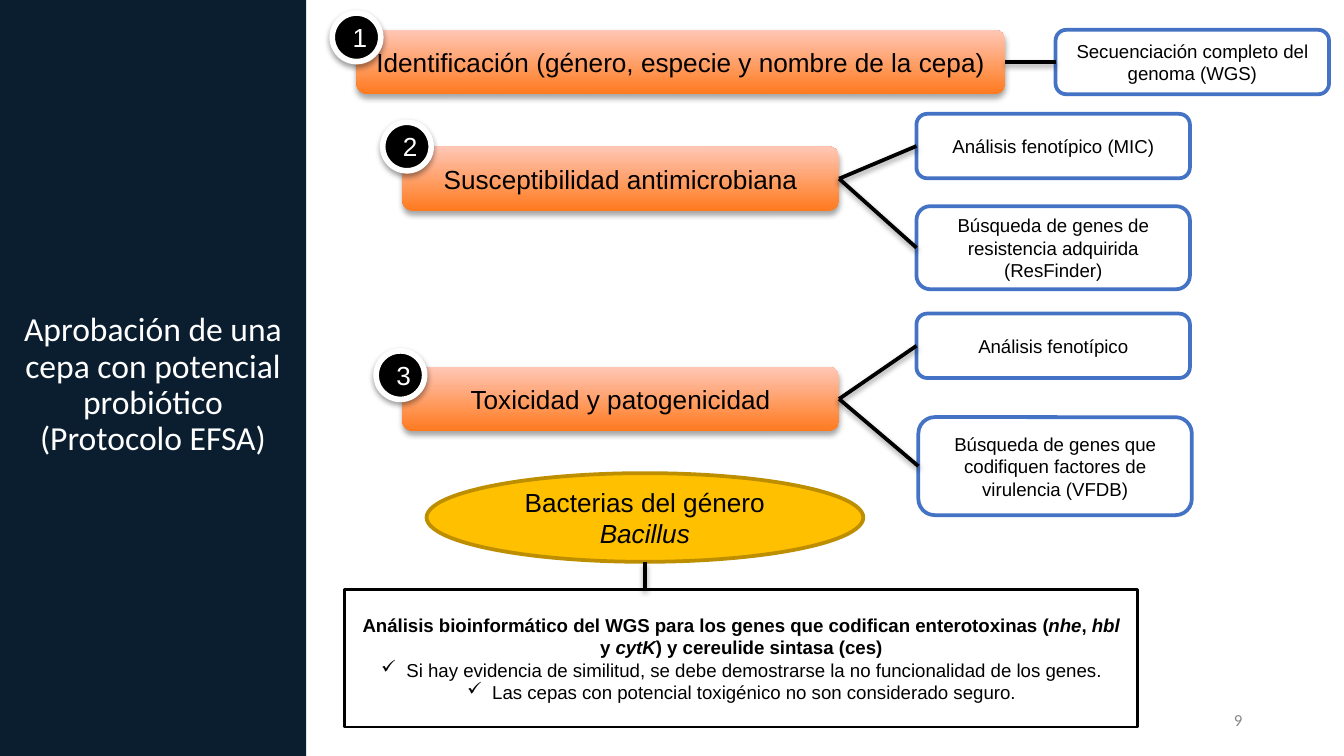
from dataclasses import dataclass
from typing import NamedTuple

from lxml.etree import SubElement
from pptx import Presentation
from pptx.dml.color import RGBColor
from pptx.enum.shapes import MSO_CONNECTOR as Link, MSO_SHAPE as Kind
from pptx.enum.text import MSO_ANCHOR as Anchor, PP_ALIGN as Align
from pptx.oxml.ns import qn
from pptx.util import Pt

BLACK, WHITE, BLUE = "000000", "FFFFFF", "4472C4"
BAR_H, TEST_W, DOT = 34.5, 146.5, 26


class Box(NamedTuple):
    x: float
    y: float
    w: float
    h: float = BAR_H

    @property
    def left(self) -> tuple[float, float]:
        return self.x, self.y + self.h / 2

    @property
    def right(self) -> tuple[float, float]:
        return self.x + self.w, self.y + self.h / 2


class Font(NamedTuple):
    size: float
    color: str = BLACK
    face: str = "Arial"


class Test(NamedTuple):
    box: Box
    text: str


@dataclass
class Step:
    text: str
    bar: Box
    dot: tuple[float, float]
    tests: list[Test]


HEAD, NOTE = Font(14), Font(10)

STEPS = [
    Step("Identificación (género, especie y nombre de la cepa)",
         Box(191, 16, 347.5), (178, 7),
         [Test(Box(565.5, 16, TEST_W), "Secuenciación completo del genoma (WGS)")]),
    Step("Susceptibilidad antimicrobiana",
         Box(215.5, 78.5, 234), (205, 65.5),
         [Test(Box(491, 61, TEST_W), "Análisis fenotípico (MIC)"),
          Test(Box(491, 110.5, TEST_W, 44.5),
               "Búsqueda de genes de resistencia adquirida (ResFinder)")]),
    Step("Toxicidad y patogenicidad",
         Box(215.5, 196.5, 234), (201.5, 188),
         [Test(Box(491, 168, TEST_W), "Análisis fenotípico"),
          Test(Box(492, 223.5, TEST_W, 52.5),
               "Búsqueda de genes que codifiquen factores de virulencia (VFDB)")]),
]


def paint(code: str) -> RGBColor:
    return RGBColor.from_string(code)


def write(frame, lines: list[str], font: Font, align=Align.CENTER) -> None:
    """Fill a frame; parts between asterisks are italic."""
    frame.word_wrap = True
    frame.vertical_anchor = Anchor.MIDDLE
    frame.text = "\n".join(lines)
    for para in frame.paragraphs:
        para.alignment = align
        parts = para.text.split("*")
        para.text = parts[0]
        for part in parts[1:]:
            para.add_run().text = part
        for n, run in enumerate(para.runs):
            run.font.size = Pt(font.size)
            run.font.name = font.face
            run.font.color.rgb = paint(font.color)
            if n % 2:
                run.font.italic = True


def pad(frame, x: float, y: float) -> None:
    frame.margin_left = frame.margin_right = Pt(x)
    frame.margin_top = frame.margin_bottom = Pt(y)


def shade(item, alpha: int = 38, dist: float = 1.6) -> None:
    """Cast a soft black shadow straight down."""
    props = item._element.spPr
    glow = props.find(qn("a:effectLst"))
    if glow is None:
        glow = SubElement(props, qn("a:effectLst"))
    drop = SubElement(glow, qn("a:outerShdw"), blurRad=str(Pt(3.1)),
                      dist=str(Pt(dist)), dir="5400000", rotWithShape="0")
    tint = SubElement(drop, qn("a:srgbClr"), val=BLACK)
    SubElement(tint, qn("a:alpha"), val=str(alpha * 1000))


def block(slide, kind: Kind, box: Box, lines: list[str], font: Font,
          fill: str = "", edge: str = "", width: float = 2):
    item = slide.shapes.add_shape(kind, *map(Pt, box))
    item.shadow.inherit = False
    if fill:
        item.fill.solid()
        item.fill.fore_color.rgb = paint(fill)
    else:
        item.fill.background()
    if edge:
        item.line.color.rgb = paint(edge)
        item.line.width = Pt(width)
    else:
        item.line.fill.background()
    write(item.text_frame, lines, font)
    return item


def join(slide, start: tuple[float, float], end: tuple[float, float]) -> None:
    line = slide.shapes.add_connector(Link.STRAIGHT, *map(Pt, start + end))
    line.line.color.rgb = paint(BLACK)
    line.line.width = Pt(2)
    shade(line)


def check(para) -> None:
    """Give a paragraph a check mark bullet."""
    props = para._p.get_or_add_pPr()
    props.set("marL", str(Pt(13.5)))
    props.set("indent", str(-Pt(13.5)))
    SubElement(SubElement(props, qn("a:buClr")), qn("a:srgbClr"), val=BLACK)
    SubElement(props, qn("a:buChar"), char="✓")


def draw(slide, num: int, step: Step) -> None:
    bar = block(slide, Kind.ROUNDED_RECTANGLE, step.bar, [step.text], HEAD)
    bar.fill.gradient()
    bar.fill.gradient_angle = 90
    for stop, code in zip(bar.fill.gradient_stops, ("FF7A1F", "FFC7B6")):
        stop.color.rgb = paint(code)
    shade(bar, 35, 1.8)
    for box, text in step.tests:
        block(slide, Kind.ROUNDED_RECTANGLE, box, [text], NOTE, WHITE, BLUE)
        join(slide, step.bar.right, box.left)
    dot = block(slide, Kind.OVAL, Box(*step.dot, DOT, DOT), [str(num)],
                Font(14, WHITE), BLACK, WHITE, 3)
    shade(dot)


def main() -> None:
    deck = Presentation()
    deck.slide_width, deck.slide_height = Pt(720), Pt(405)
    slide = deck.slides.add_slide(deck.slide_layouts[6])

    # Title panel
    panel = block(slide, Kind.RECTANGLE, Box(0, -2, 164, 417),
                  ["Aprobación de una cepa con potencial probiótico",
                   "(Protocolo EFSA)"],
                  Font(18, WHITE, "Calibri"), "0B1E30")
    pad(panel.text_frame, 2, 2)
    for para in panel.text_frame.paragraphs:
        para.line_spacing = 0.9

    # Numbered steps with their tests
    for num, step in enumerate(STEPS, 1):
        draw(slide, num, step)

    # Bacillus branch
    genus = Box(228.5, 253.5, 234, 47.5)
    genes = Box(184.5, 316, 425, 73.5)
    block(slide, Kind.OVAL, genus, ["Bacterias del género *Bacillus"], HEAD,
          "FFC000", "BD8E00")
    rules = block(slide, Kind.RECTANGLE, genes, [
        "Análisis bioinformático del WGS para los genes que codifican "
        "enterotoxinas (*nhe*, *hbl *y *cytK*) y cereulide sintasa (ces)",
        "Si hay evidencia de similitud, se debe demostrarse la no "
        "funcionalidad de los genes.",
        "Las cepas con potencial toxigénico no son considerado seguro.",
    ], NOTE, edge=BLACK, width=1.5)
    first, *rest = rules.text_frame.paragraphs
    for run in first.runs:
        run.font.bold = True
    for para in rest:
        check(para)
    mid = genus.x + genus.w / 2
    join(slide, (mid, genus.y + genus.h), (mid, genes.y))

    # Page number
    page = slide.shapes.add_textbox(*map(Pt, Box(508.5, 375, 162, 21.5)))
    write(page.text_frame, ["9"], Font(9, "888888", "Calibri"), Align.RIGHT)
    pad(page.text_frame, 5, 3)

    deck.save("out.pptx")


if __name__ == "__main__":
    main()
